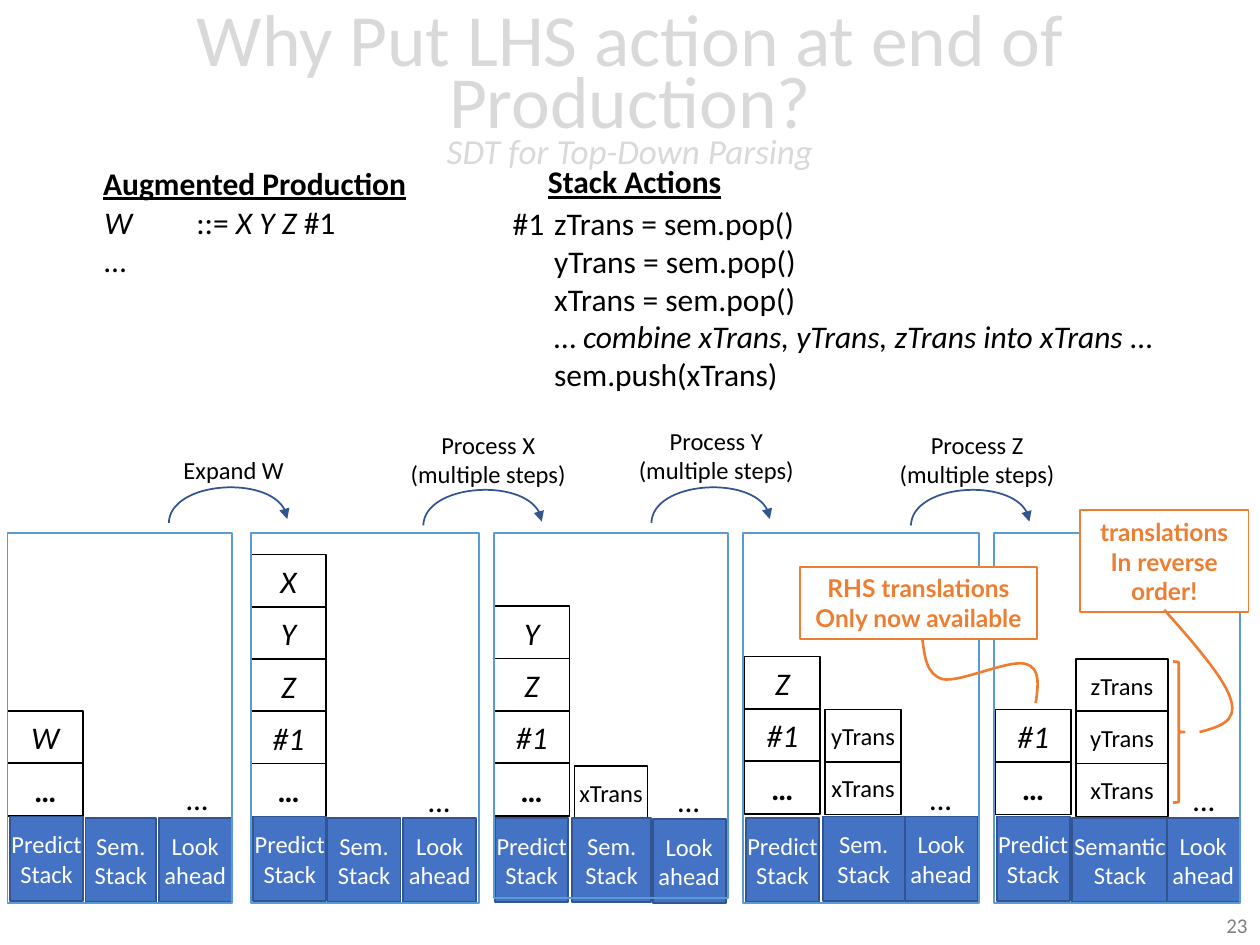
from lxml import etree
from pptx import Presentation
from pptx.dml.color import RGBColor
from pptx.enum.shapes import MSO_SHAPE as Kind
from pptx.enum.text import MSO_ANCHOR as Anchor, MSO_AUTO_SIZE as Fit, PP_ALIGN as Align
from pptx.oxml.ns import qn
from pptx.util import Inches, Pt

BLACK = RGBColor(0x00, 0x00, 0x00)
WHITE = RGBColor(0xFF, 0xFF, 0xFF)
PALE = RGBColor(0xD9, 0xD9, 0xD9)
GRAY = RGBColor(0x80, 0x80, 0x80)
BLUE = RGBColor(0x44, 0x72, 0xC4)
NAVY = RGBColor(0x32, 0x54, 0x91)
SKY = RGBColor(0x5B, 0x9B, 0xD5)
ORANGE = RGBColor(0xED, 0x7D, 0x31)
TOP = 4.23
STEP = 0.415
CELL = 0.42
FOOT = 0.67


class Page:
    font = "Calibri"

    def __init__(self, slide):
        self.slide = slide
        self.shapes = slide.shapes

    def group(self):
        self.shapes = self.slide.shapes.add_group_shape().shapes

    def leave(self):
        self.shapes = self.slide.shapes

    def style(self, font, size, color, bold=None, italic=None, under=None, name=None):
        font.name = name or self.font
        font.size = Pt(size)
        font.color.rgb = color
        font.bold, font.italic, font.underline = bold, italic, under

    def fill_in(self, frame, lines, size=18, color=BLACK, align=Align.LEFT, **look):
        for i, line in enumerate(lines):
            para = frame.paragraphs[0] if i == 0 else frame.add_paragraph()
            para.alignment = align
            self.style(para.font, size, color, **look)
            for part in [line] if isinstance(line, str) else line:
                words, slant = (part, None) if isinstance(part, str) else part
                run = para.add_run()
                run.text = words
                self.style(run.font, size, color, **look)
                if slant:
                    run.font.italic = True

    def title(self, head, sub):
        box = self.slide.shapes.title
        box.left, box.top, box.width, box.height = map(Inches, (0, 0.02, 10, 1.45))
        frame = box.text_frame
        frame.auto_size = Fit.NONE
        frame.word_wrap = True
        frame.vertical_anchor = Anchor.MIDDLE
        para = frame.paragraphs[0]
        para.alignment = Align.CENTER
        para.line_spacing = 0.7
        run = para.add_run()
        run.text = head
        self.style(run.font, 42, PALE)
        para.add_line_break()
        run = para.add_run()
        run.text = sub
        self.style(run.font, 20, PALE, italic=True)

    def text(self, x, y, w, h, lines, **look):
        box = self.shapes.add_textbox(*map(Inches, (x, y, w, h)))
        frame = box.text_frame
        frame.word_wrap = False
        frame.auto_size = Fit.SHAPE_TO_FIT_TEXT
        self.fill_in(frame, lines, **look)
        return frame

    def shape(self, x, y, w, h, line, fill=None, lines=(), kind=Kind.RECTANGLE, width=1, **look):
        box = self.shapes.add_shape(kind, *map(Inches, (x, y, w, h)))
        box.shadow.inherit = False
        if fill is None:
            box.fill.background()
        else:
            box.fill.solid()
            box.fill.fore_color.rgb = fill
        if line is None:
            box.line.fill.background()
        else:
            box.line.color.rgb = line
            box.line.width = Pt(width)
        frame = box.text_frame
        frame.margin_left = frame.margin_right = 0
        frame.vertical_anchor = Anchor.MIDDLE
        frame.word_wrap = True
        self.fill_in(frame, lines, align=Align.CENTER, **look)
        return frame

    def cells(self, x, y, w, words, **look):
        for i, word in enumerate(words):
            self.shape(x, y + i * STEP, w, CELL, BLACK, WHITE, [word], **look)

    def note(self, x, y, w, h, lines):
        frame = self.shape(x, y, w, h, ORANGE, WHITE, lines,
                           size=14, color=ORANGE, bold=True, name="Lato")
        frame.word_wrap = False

    def curve(self, points, color, width, arrow=False):
        spots = [(Inches(x), Inches(y)) for x, y in points]
        pen = self.shapes.build_freeform(*spots[0])
        pen.add_line_segments(spots[1:], close=False)
        shape = pen.convert_to_shape()
        shape.shadow.inherit = False
        shape.fill.background()
        shape.line.color.rgb = color
        shape.line.width = Pt(width)
        track = shape._element.find(".//" + qn("a:path"))
        legs = track.findall(qn("a:lnTo"))
        for i in range(0, len(legs), 3):
            bend = etree.SubElement(track, qn("a:cubicBezTo"))
            for leg in legs[i:i + 3]:
                bend.append(leg[0])
                track.remove(leg)
        if arrow:
            line = shape._element.find(".//" + qn("a:ln"))
            etree.SubElement(line, qn("a:tailEnd"), type="triangle")

    def stage(self, frame, items, sems, feet, dots):
        self.group()
        x, y, words = items
        self.cells(x, y, 0.6, words[:-1], italic=True)
        self.cells(x, y + STEP * (len(words) - 1), 0.6, words[-1:], bold=True)
        if sems:
            x, y, w, words = sems
            self.cells(x, y, w, words, size=14)
        for x, y, w, words in feet:
            self.shape(x, y, w, FOOT, NAVY, BLUE, words, size=14, color=WHITE)
        self.shape(*dots, 0.6, CELL, None, None, ["…"], italic=True)
        x, w, h = frame
        self.shape(x, TOP, w, h, SKY)
        self.leave()


PRED, SEM, LOOK = ["Predict", "Stack"], ["Sem.", "Stack"], ["Look ahead"]
STAGES = [
    ((0.06, 1.78, 2.94), (0.06, 5.64, ["W", "…"]), None,
     [(0.08, 6.48, 0.58, PRED), (0.68, 6.49, 0.56, SEM), (1.26, 6.49, 0.58, LOOK)],
     (1.27, 6.12)),
    ((1.99, 1.81, 2.94), (1.99, 4.4, ["X", "Y", "Z", "#1", "…"]), None,
     [(2.01, 6.48, 0.58, PRED), (2.6, 6.49, 0.58, SEM), (3.2, 6.49, 0.58, LOOK)],
     (3.19, 6.14)),
    ((3.92, 1.86, 2.9), (3.92, 4.81, ["Y", "Z", "#1", "…"]), (4.56, 6.08, 0.58, ["xTrans"]),
     [(3.93, 6.49, 0.58, PRED), (4.54, 6.49, 0.63, ["Sem. Stack"]), (5.18, 6.5, 0.58, LOOK)],
     (5.17, 6.14)),
    ((5.9, 1.87, 2.94), (5.91, 5.21, ["Z", "#1", "…"]), (6.55, 5.63, 0.6, ["yTrans", "xTrans"]),
     [(5.92, 6.49, 0.58, PRED), (6.53, 6.48, 0.65, SEM), (7.18, 6.48, 0.58, LOOK)],
     (7.17, 6.12)),
    ((7.89, 1.95, 2.94), (7.9, 5.63, ["#1", "…"]),
     (8.54, 5.23, 0.73, ["zTrans", "yTrans", "xTrans"]),
     [(7.91, 6.48, 0.58, PRED), (8.51, 6.49, 0.76, ["Semantic", "Stack"]),
      (9.26, 6.49, 0.58, LOOK)],
     (9.26, 6.13)),
]
MOVES = [
    (1.34, 4.15, 1.35, 3.56, 1.01, ["Expand W"]),
    (3.36, 4.17, 3.15, 3.36, 1.45, ["Process X", "(multiple steps)"]),
    (5.17, 4.15, 4.96, 3.33, 1.45, ["Process Y", "(multiple steps)"]),
    (7.23, 4.17, 7.03, 3.36, 1.45, ["Process Z", "(multiple steps)"]),
]
ARC = [(0, 0), (0.01, -0.33), (0.91, -0.39), (0.94, -0.03)]


def main():
    deck = Presentation()
    deck.slide_width, deck.slide_height = Inches(10), Inches(7.5)
    page = Page(deck.slides.add_slide(deck.slide_layouts[5]))
    page.title("Why Put LHS action at end of Production?", "SDT for Top-Down Parsing")

    num = page.text(7.75, 7.2, 2.25, 0.28, ["23"], size=12, color=GRAY, align=Align.RIGHT)
    num.auto_size = Fit.NONE
    num.word_wrap = True
    num.vertical_anchor = Anchor.MIDDLE

    page.text(4.25, 1.24, 1.59, 0.4, ["Stack Actions"], bold=True, under=True)
    page.text(3.97, 1.57, 0.46, 0.4, ["#1"])
    page.text(4.3, 1.57, 4.97, 1.62, [
        "zTrans = sem.pop()", "yTrans = sem.pop()", "xTrans = sem.pop()",
        ["… ", ("combine xTrans, yTrans, zTrans into xTrans", True), " …"],
        "sem.push(xTrans)"])
    rule = page.text(0.73, 1.56, 2.07, 0.71, [
        [("W\t", True), "::= ", ("X Y Z ", True), "#1"], "…"])
    props = rule.paragraphs[0]._p.get_or_add_pPr()
    tabs = etree.Element(qn("a:tabLst"))
    etree.SubElement(tabs, qn("a:tab"), pos=str(Inches(0.73)), algn="l")
    props.find(qn("a:defRPr")).addprevious(tabs)
    page.text(0.72, 1.25, 2.63, 0.4, ["Augmented Production"], bold=True, under=True)

    for stage in STAGES:
        page.stage(*stage)
    for x, y, left, top, w, words in MOVES:
        page.curve([(x + dx, y + dy) for dx, dy in ARC], NAVY, 1, arrow=True)
        page.text(left, top, w, 0.29 * len(words), words, size=14, align=Align.CENTER)

    page.group()
    page.note(6.35, 4.5, 1.88, 0.57, ["RHS translations", "Only now available"])
    page.curve([(7.32, 5.07), (7.34, 5.21), (7.35, 5.35), (7.48, 5.39), (7.62, 5.42),
                (8.01, 5.23), (8.14, 5.27), (8.26, 5.3), (8.24, 5.44), (8.22, 5.58)],
               ORANGE, 1.5)
    page.group()
    page.note(8.57, 4.05, 1.34, 0.81, ["translations", "In reverse", "order!"])
    page.curve([(9.24, 4.84), (9.49, 5.12), (9.73, 5.4), (9.77, 5.56),
                (9.82, 5.73), (9.67, 5.77), (9.52, 5.81)], ORANGE, 1.5)
    page.shape(9.31, 5.25, 0.09, 1.12, ORANGE, kind=Kind.RIGHT_BRACE, width=1.5)
    deck.save("out.pptx")


if __name__ == "__main__":
    main()
